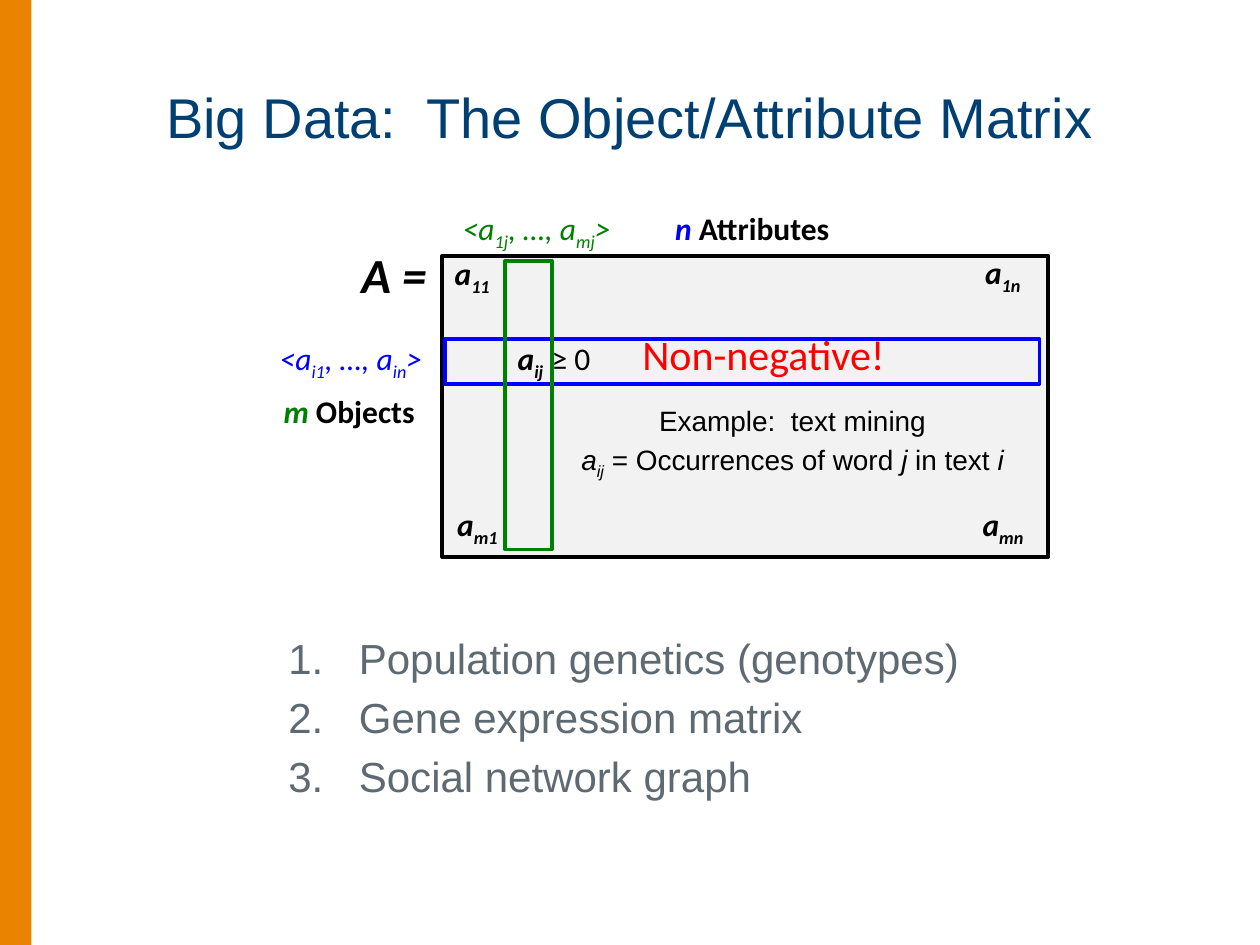
from dataclasses import dataclass

from lxml import etree
from pptx import Presentation
from pptx import util as u
from pptx.dml.color import RGBColor
from pptx.enum import shapes, text
from pptx.oxml.ns import qn

LEFT, MID, RIGHT = text.PP_ALIGN.LEFT, text.PP_ALIGN.CENTER, text.PP_ALIGN.RIGHT
SCALE = 9144  # EMU in one px, 100 px to the inch


@dataclass(frozen=True)
class Theme:
    sans: str = "Arial"
    math: str = "Calibri"
    bar: str = "E98300"
    title: str = "003F72"
    list: str = "5E6A71"
    panel: str = "F2F2F2"
    ink: str = "000000"
    row: str = "0000FF"
    col: str = "008000"
    alert: str = "FF0000"
    head: int = 32
    big: int = 28
    body: int = 24
    label: int = 18
    note: int = 16


def sub(word):
    return word, {"sub": True}


def px(*nums):
    return [u.Emu(n * SCALE) for n in nums]


class Deck:
    def __init__(self, theme):
        self.theme = theme
        self.prs = Presentation()
        self.prs.slide_width, self.prs.slide_height = px(1000, 750)
        self.slide = self.prs.slides.add_slide(self.prs.slide_layouts[5])

    def style(self, font, size=None, color=None, face=None, bold=None, italic=None):
        if size:
            font.size = u.Pt(size)
        if color:
            font.color.rgb = RGBColor.from_string(color)
        if face:
            font.name = face
        if bold is not None:
            font.bold = bold
        if italic is not None:
            font.italic = italic

    def fill_para(self, para, runs, align=LEFT, **look):
        """Add runs, each a string or a (string, overrides) pair."""
        para.alignment = align
        self.style(para.font, **look)
        for item in runs:
            word, own = (item, {}) if isinstance(item, str) else item
            run = para.add_run()
            run.text = word
            if own.get("sub"):
                run._r.get_or_add_rPr().set("baseline", "-25000")
            else:
                self.style(run.font, **own)

    def title(self, box, words):
        shape = self.slide.shapes.title
        shape.left, shape.top, shape.width, shape.height = px(*box)
        frame = shape.text_frame
        frame.vertical_anchor = text.MSO_ANCHOR.MIDDLE
        t = self.theme
        self.fill_para(frame.paragraphs[0], [words], MID,
                       size=t.head, color=t.title, face=t.sans)

    def rect(self, box, fill=None, line=None):
        shape = self.slide.shapes.add_shape(shapes.MSO_SHAPE.RECTANGLE, *px(*box))
        shape.shadow.inherit = False
        if fill:
            shape.fill.solid()
            shape.fill.fore_color.rgb = RGBColor.from_string(fill)
        else:
            shape.fill.background()
        if line:
            shape.line.color.rgb = RGBColor.from_string(line)
            shape.line.width = u.Pt(2)
        else:
            shape.line.fill.background()

    def frame(self, box, wrap=True):
        frame = self.slide.shapes.add_textbox(*px(*box)).text_frame
        frame.word_wrap = wrap
        return frame

    def label(self, box, runs, wrap=True, align=LEFT, **look):
        """Place one line of matrix notation in a box that fits its text."""
        frame = self.frame(box, wrap)
        frame.auto_size = text.MSO_AUTO_SIZE.SHAPE_TO_FIT_TEXT
        t = self.theme
        base = {"size": t.label, "color": t.ink, "face": t.math}
        self.fill_para(frame.paragraphs[0], runs, align, **(base | look))

    def block(self, box, rows, size, color, align=LEFT, number=False):
        """Place several paragraphs, numbered on request."""
        frame = self.frame(box)
        for i, runs in enumerate(rows):
            para = frame.add_paragraph() if i else frame.paragraphs[0]
            if number:
                props = para._p.get_or_add_pPr()
                props.set("marL", str(56 * SCALE))
                props.set("indent", str(-56 * SCALE))
                etree.SubElement(props, qn("a:buAutoNum"), type="arabicPeriod")
            if i:
                para.space_before = u.Pt(size * 0.2)
            self.fill_para(para, runs, align, size=size, color=color,
                           face=self.theme.sans)


def main():
    t = Theme()
    deck = Deck(t)
    deck.rect((0, 0, 25, 750), fill=t.bar)
    deck.title((50, 30, 900, 125), "Big Data:  The Object/Attribute Matrix")

    deck.rect((351, 203, 481, 239), fill=t.panel, line=t.ink)
    bold = {"bold": True, "italic": True}
    plain = {"italic": False}
    deck.label((130, 306, 209, 40), [("m", {"color": t.col}), (" Objects", plain)],
               align=RIGHT, **bold)
    deck.label((526, 161, 148, 40), [("n", {"color": t.row}), (" Attributes", plain)],
               **bold)
    deck.label((277, 189, 89, 57), ["A ="], size=t.big, **bold)
    deck.label((401, 264, 98, 40),
               ["a", sub("ij  "), ("≥ 0", {"bold": False, "italic": False})], **bold)
    corners = [(351, 197, "11"), (353, 396, "m1"), (772, 196, "1n"), (770, 396, "mn")]
    for x, y, index in corners:
        deck.label((x, y, 59, 40), ["a", sub(index)], **bold)

    vectors = [((351, 161, 150, 40), "1j", "mj", t.col),
               ((206, 264, 145, 40), "i1", "in", t.row)]
    for box, first, last, color in vectors:
        deck.label(box, ["<a", sub(first), ", …, a", sub(last), ">"],
                   wrap=False, align=MID, color=color, italic=True)
    deck.rect((353, 269, 472, 36), line=t.row)
    deck.rect((401, 207, 37, 229), line=t.col)

    deck.block((219, 497, 561, 151),
               [["Population genetics (genotypes)"], ["Gene expression matrix"],
                ["Social network graph"]], t.body, t.list, number=True)
    slant = {"italic": True}
    deck.block((438, 315, 382, 62),
               [["Example:  text mining"],
                [("a", slant), ("ij", {"sub": True}), " = Occurrences of word ",
                 ("j", slant), " in text ", ("i", slant)]], t.note, t.ink, MID)
    # The subscript of the note is slanted like its base letter.
    note = deck.slide.shapes[-1].text_frame.paragraphs[1]
    note.runs[1].font.italic = True
    deck.label((500, 256, 216, 50), ["Non-negative!"], wrap=False,
               size=t.body, color=t.alert)
    deck.prs.save("out.pptx")


if __name__ == "__main__":
    main()
